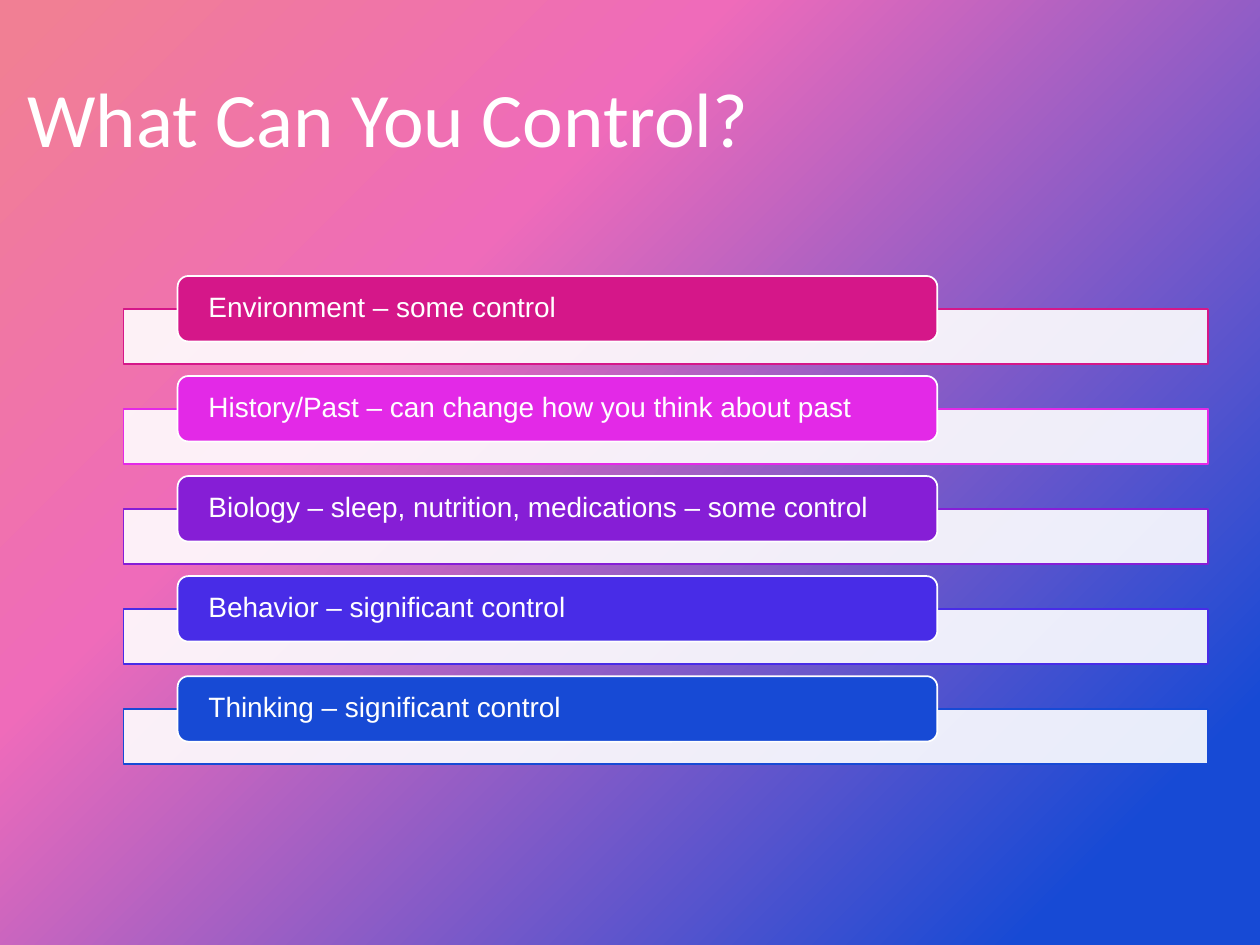
from copy import deepcopy
from dataclasses import dataclass

from lxml import etree
from pptx import Presentation
from pptx import util as u
from pptx.dml.color import RGBColor
from pptx.enum import shapes, text
from pptx.oxml.ns import qn


@dataclass(frozen=True)
class Theme:
    white: str = "FFFFFF"
    gradient: tuple = ((0.11, "174AD5"), (0.67, "EF6BBA"), (0.98, "F17F94"))
    title_font: str = "Calibri"
    title_size: int = 44
    label_font: str = "Arial"
    label_size: int = 16
    line_width: int = 1


theme = Theme()


def add_box(kind, left, top, width, height, fill, line):
    sp = s.shapes.add_shape(kind, *map(u.Inches, (left, top, width, height)))
    sp.shadow.inherit = False
    sp.fill.solid()
    sp.fill.fore_color.rgb = RGBColor.from_string(fill)
    sp.line.color.rgb = RGBColor.from_string(line)
    sp.line.width = u.Pt(theme.line_width)
    return sp


def write(sp, words, font, size, frame):
    tf = sp.text_frame
    for name, value in frame.items():
        setattr(tf, name, value)
    p = tf.paragraphs[0]
    p.alignment = text.PP_ALIGN.LEFT
    p.line_spacing = 0.9
    r = p.add_run()
    r.text = words
    for name, value in {"name": font, "size": u.Pt(size)}.items():
        setattr(r.font, name, value)
    r.font.color.rgb = RGBColor.from_string(theme.white)


prs = Presentation()
prs.slide_width, prs.slide_height = u.Inches(10), u.Inches(7.5)
s = prs.slides.add_slide(prs.slide_layouts[6])

# Diagonal background, with a third stop added to the default two
bg = s.background.fill
bg.gradient()
bg.gradient_angle = 135
stop_list = s.element.find(".//" + qn("a:gsLst"))
stop_list.append(deepcopy(stop_list[-1]))
for stop, (position, color) in zip(bg.gradient_stops, theme.gradient):
    stop.position = position
    stop.color.rgb = RGBColor.from_string(color)

# Title
title = s.shapes.add_textbox(*map(u.Inches, (0.12, 0.59, 9.74, 6.3)))
write(title, "What Can You Control?", theme.title_font, theme.title_size,
      {"word_wrap": True, "vertical_anchor": text.MSO_ANCHOR.TOP})

# Factors: a pale bar behind a coloured label, at an even pitch
factors = [
    ("Environment – some control", "D51789"),
    ("History/Past – can change how you think about past", "E329E7"),
    ("Biology – sleep, nutrition, medications – some control", "861ED6"),
    ("Behavior – significant control", "482CE7"),
    ("Thinking – significant control", "174AD5"),
]
first_top, pitch = 2.19, 0.794
label_frame = {
    "word_wrap": True,
    "vertical_anchor": text.MSO_ANCHOR.MIDDLE,
    "margin_left": u.Inches(0.22),
    "margin_right": u.Inches(0.22),
    "margin_top": 0,
    "margin_bottom": 0,
}
for i, (words, color) in enumerate(factors):
    top = first_top + i * pitch
    bar = add_box(shapes.MSO_SHAPE.RECTANGLE, 0.98, top + 0.26, 8.61, 0.44,
                  theme.white, color)
    white = bar.element.spPr.find(qn("a:solidFill"))[0]
    etree.SubElement(white, qn("a:alpha"), val="90000")

    label = add_box(shapes.MSO_SHAPE.ROUNDED_RECTANGLE, 1.41, top, 6.03, 0.52,
                    color, theme.white)
    write(label, words, theme.label_font, theme.label_size, label_frame)

prs.save("out.pptx")
